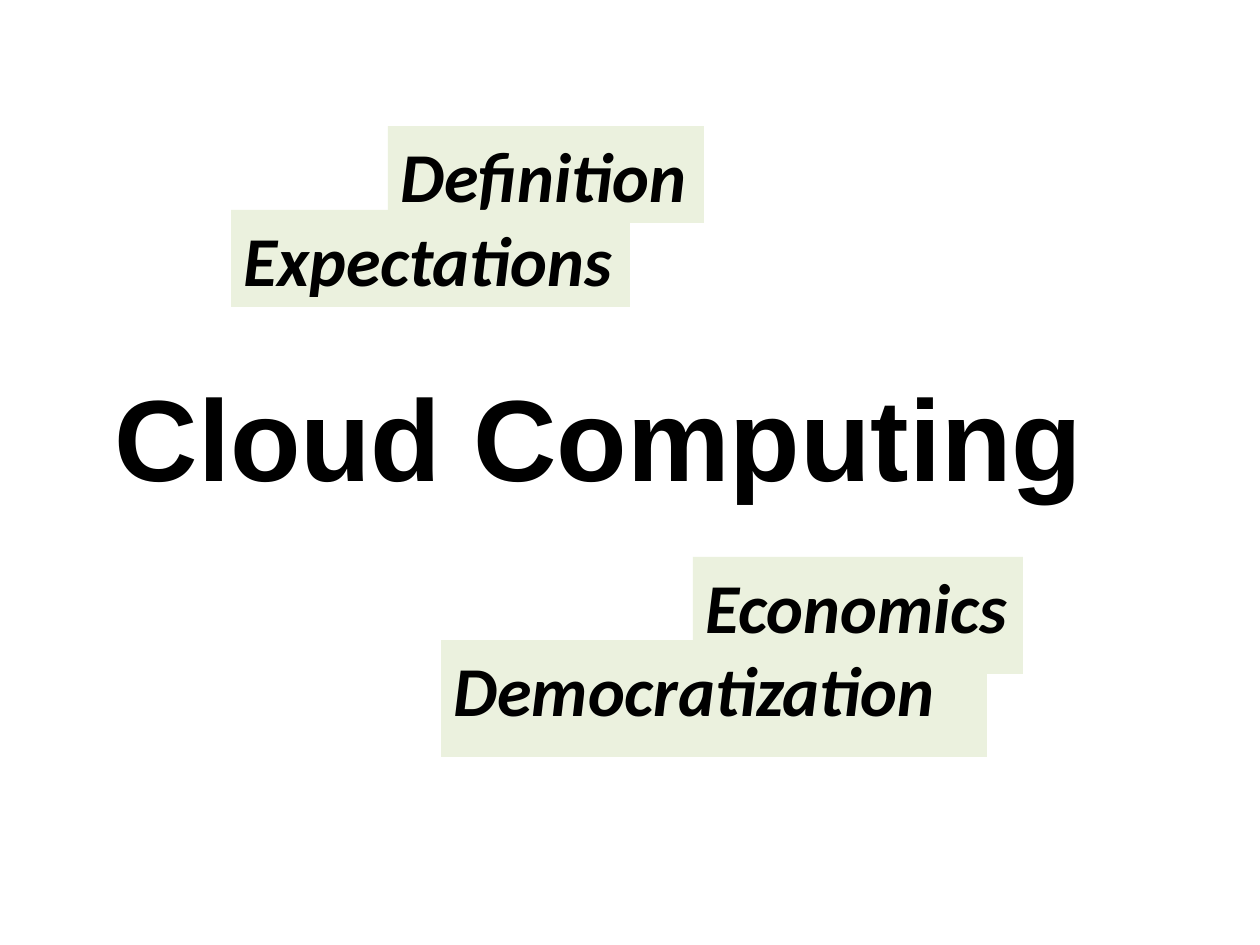
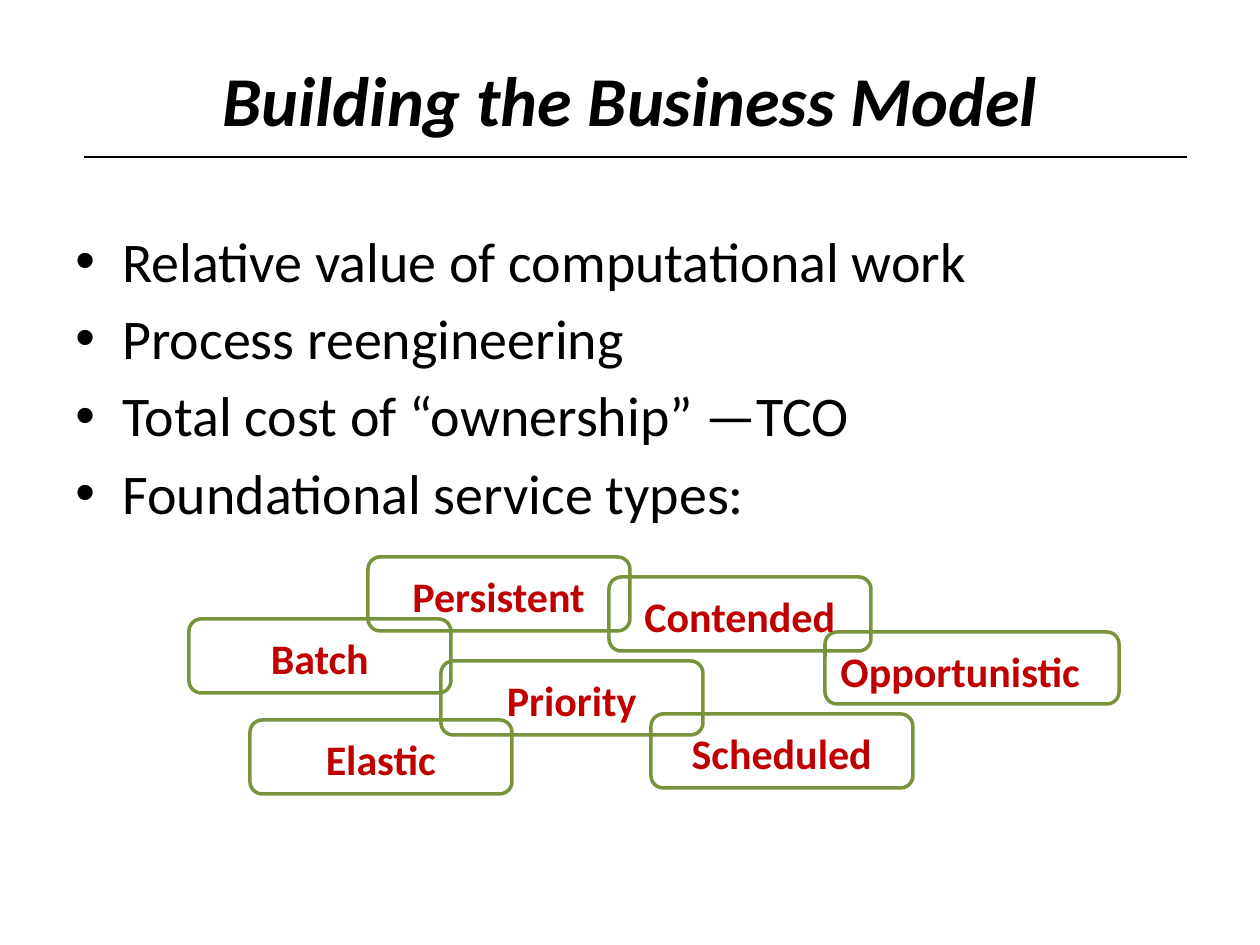
from typing import NamedTuple

from lxml.etree import SubElement
from pptx import Presentation
from pptx.dml.color import RGBColor
from pptx.enum.shapes import MSO_CONNECTOR, MSO_SHAPE
from pptx.enum.text import MSO_ANCHOR, PP_ALIGN
from pptx.oxml.ns import qn
from pptx.shapes.base import BaseShape
from pptx.slide import Slide
from pptx.text.text import TextFrame, _Paragraph
from pptx.util import Emu, Pt

SCALE = 914400 / 126
COLORS = {"ink": "000000", "pale": "EBF1DE", "green": "77933C", "red": "C00000"}


class Box(NamedTuple):
    left: int
    top: int
    width: int
    height: int


class Style(NamedTuple):
    size: int
    color: str = "ink"
    bold: bool = False
    slant: bool = False
    font: str = "Calibri"


class Label(NamedTuple):
    text: str
    box: Box
    align: PP_ALIGN = PP_ALIGN.LEFT


COVER = Style(66, bold=True, font="Arial")
TITLE = Style(40, bold=True, slant=True)
BODY = Style(32)
BADGE = Style(24, "red", bold=True)

TAGS = [
    Label("Definition", Box(388, 126, 316, 97)),
    Label("Expectations", Box(231, 210, 399, 97)),
    Label("Economics", Box(693, 557, 330, 117)),
    Label("Democratization", Box(441, 640, 546, 117)),
]

POINTS = [
    "Relative value of computational work",
    "Process reengineering",
    "Total cost of “ownership” —TCO",
    "Foundational service types:",
]


def badge(text: str, left: int, top: int) -> Label:
    return Label(text, Box(left, top, 262, 74), PP_ALIGN.CENTER)


BADGES = [
    badge("Persistent", 368, 557),
    badge("Batch", 189, 619),
    badge("Elastic", 250, 720),
    badge("Scheduled", 651, 714),
    Label("Opportunistic", Box(825, 632, 294, 72)),
    badge("Priority", 441, 661),
    badge("Contended", 609, 577),
]


def px(count: int) -> Emu:
    return Emu(round(count * SCALE))


def place(box: Box) -> list[Emu]:
    return [px(side) for side in box]


def tint(name: str) -> RGBColor:
    return RGBColor.from_string(COLORS[name])


def add_run(para: _Paragraph, text: str, style: Style) -> None:
    run = para.add_run()
    run.text = text
    font = run.font
    font.name, font.size = style.font, Pt(style.size)
    font.bold, font.italic = style.bold, style.slant
    font.color.rgb = tint(style.color)


def add_text(slide: Slide, box: Box) -> TextFrame:
    frame = slide.shapes.add_textbox(*place(box)).text_frame
    frame.word_wrap = True
    return frame


def add_title(slide: Slide, label: Label, style: Style) -> None:
    frame = add_text(slide, label.box)
    frame.vertical_anchor = MSO_ANCHOR.MIDDLE
    para = frame.paragraphs[0]
    para.alignment = label.align
    add_run(para, label.text, style)


def add_shape(slide: Slide, label: Label, kind: MSO_SHAPE, style: Style) -> BaseShape:
    shape = slide.shapes.add_shape(kind, *place(label.box))
    shape.shadow.inherit = False
    frame = shape.text_frame
    frame.word_wrap = True
    frame.vertical_anchor = MSO_ANCHOR.TOP
    para = frame.paragraphs[0]
    para.alignment = label.align
    add_run(para, label.text, style)
    return shape


def add_tag(slide: Slide, label: Label) -> None:
    shape = add_shape(slide, label, MSO_SHAPE.RECTANGLE, TITLE)
    shape.fill.solid()
    shape.fill.fore_color.rgb = tint("pale")
    shape.line.fill.background()


def add_badge(slide: Slide, label: Label) -> None:
    shape = add_shape(slide, label, MSO_SHAPE.ROUNDED_RECTANGLE, BADGE)
    shape.fill.background()
    shape.line.color.rgb = tint("green")
    shape.line.width = Pt(2)
    shape.text_frame.margin_left = px(12)
    shape.text_frame.margin_top = px(10)


def add_rule(slide: Slide, left: int, right: int, top: int) -> None:
    rule = slide.shapes.add_connector(
        MSO_CONNECTOR.STRAIGHT, px(left), px(top), px(right), px(top)
    )
    rule.line.color.rgb = tint("ink")
    rule.line.width = Pt(0.75)
    SubElement(rule.element.spPr, qn("a:effectLst"))


def add_points(slide: Slide, box: Box, points: list[str]) -> None:
    frame = add_text(slide, box)
    for rank, point in enumerate(points):
        para = frame.add_paragraph() if rank else frame.paragraphs[0]
        para.space_before = Pt(5.8)
        props = para._p.get_or_add_pPr()
        props.set("marL", str(px(47)))
        props.set("indent", str(-px(47)))
        SubElement(props, qn("a:buFont")).set("typeface", "Arial")
        SubElement(props, qn("a:buChar")).set("char", "•")
        add_run(para, point, BODY)


def main() -> None:
    deck = Presentation()
    deck.slide_width, deck.slide_height = px(1260), px(945)
    blank = deck.slide_layouts[6]

    cover = deck.slides.add_slide(blank)
    head = Label("Cloud Computing", Box(32, 357, 1134, 157), PP_ALIGN.CENTER)
    add_title(cover, head, COVER)
    for tag in TAGS:
        add_tag(cover, tag)

    model = deck.slides.add_slide(blank)
    head = Label("Building the Business Model", Box(63, 38, 1134, 120), PP_ALIGN.CENTER)
    add_title(model, head, TITLE)
    add_points(model, Box(63, 220, 1134, 624), POINTS)
    add_rule(model, 84, 1187, 157)
    for item in BADGES:
        add_badge(model, item)

    deck.save("out.pptx")


if __name__ == "__main__":
    main()
